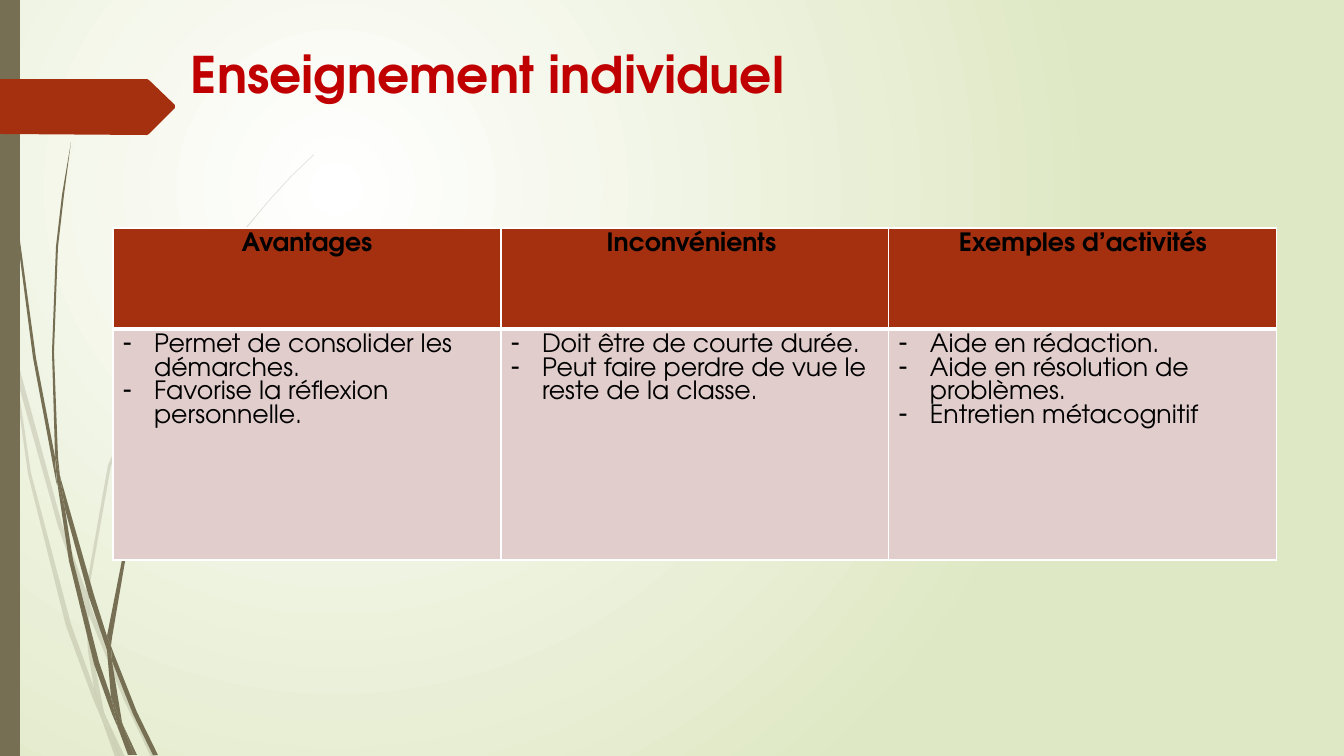
from lxml import etree
from pptx import Presentation
from pptx.dml.color import RGBColor
from pptx.enum.shapes import MSO_SHAPE
from pptx.enum.text import MSO_ANCHOR, PP_ALIGN
from pptx.oxml.ns import qn
from pptx.util import Pt

RECT = MSO_SHAPE.RECTANGLE
TOP = MSO_ANCHOR.TOP
LEFT, CENTER = PP_ALIGN.LEFT, PP_ALIGN.CENTER

FONT = "TeX Gyre Adventor"
WHITE = RGBColor(0xFF, 0xFF, 0xFF)
BLACK = RGBColor(0, 0, 0)
GREEN = RGBColor(0xDF, 0xE8, 0xC4)
OLIVE = RGBColor(0x76, 0x6F, 0x54)
RUST = RGBColor(0xA5, 0x30, 0x10)
RED = RGBColor(0xC0, 0, 0)
PINK = RGBColor(0xE1, 0xCD, 0xCC)

EMU = 914400 / 100.8

# Each blade of grass is the outline of one part, in px.
PALE = [
    [(11, 353), (9, 325), (0, 284), (0, 301), (10, 347)],
    [(58, 526), (85, 604), (86, 591), (62, 524), (14, 348), (17, 379)],
    [(93, 612), (89, 601), (89, 615), (124, 700), (151, 757), (156, 757),
     (128, 698)],
    [(120, 757), (125, 757), (106, 717)],
    [(94, 688), (71, 624), (31, 473), (17, 379), (11, 353), (28, 474),
     (66, 626), (93, 699), (102, 720), (100, 713)],
    [(85, 604), (88, 651), (94, 688), (97, 698), (106, 717), (104, 712),
     (92, 651), (89, 615), (89, 613)],
    [(89, 589), (111, 466), (161, 352), (231, 247), (270, 200), (292, 176),
     (314, 155), (314, 154), (291, 176), (270, 199), (230, 246), (159, 351),
     (108, 465), (86, 589), (86, 591), (89, 601)],
    [(102, 720), (115, 757), (120, 757)],
    [(89, 613), (89, 615), (89, 601), (86, 591), (85, 604)],
    [(97, 698), (94, 688), (100, 713), (102, 720), (120, 757), (106, 717)],
]
DARK = [
    [(7, 111), (17, 235), (33, 358), (56, 481), (57, 485), (55, 461),
     (55, 457), (36, 358), (19, 234), (8, 110), (5, 48), (4, 0), (3, 0),
     (4, 48)],
    [(89, 597), (107, 650), (107, 638), (107, 636), (94, 595), (60, 476),
     (65, 509)],
    [(114, 654), (111, 646), (112, 661), (133, 714), (153, 755), (158, 755),
     (137, 712)],
    [(111, 697), (99, 662), (73, 560), (65, 509), (57, 481), (69, 561),
     (94, 664), (112, 714), (118, 728), (117, 723)],
    [(60, 476), (58, 457), (54, 352), (58, 247), (64, 195), (71, 142),
     (62, 195), (56, 247), (52, 352), (55, 453)],
    [(134, 755), (137, 755), (123, 725)],
    [(57, 481), (65, 509), (60, 476), (55, 453), (55, 457)],
    [(112, 638), (126, 556), (159, 480), (207, 409), (233, 377), (247, 362),
     (263, 347), (262, 347), (247, 361), (233, 376), (206, 408), (157, 478),
     (123, 555), (107, 636), (111, 646)],
    [(118, 728), (128, 755), (132, 755)],
    [(107, 650), (111, 697), (117, 712), (123, 725), (122, 722), (112, 661),
     (110, 656)],
    [(107, 650), (110, 656), (112, 661), (111, 646), (107, 636), (107, 638)],
    [(117, 712), (111, 697), (117, 723), (118, 728), (131, 755), (134, 755),
     (123, 725)],
]
ARROW = [(0, 79), (147, 79), (149, 80), (175, 105), (175, 108), (149, 134),
         (147, 135), (0, 134)]

HEADS = ["Avantages", "Inconvénients ", "Exemples d’activités"]
ITEMS = [
    ["Permet de consolider les démarches.",
     "Favorise la réflexion personnelle."],
    ["Doit être de courte durée.",
     "Peut faire perdre de vue le reste de la classe."],
    ["Aide en rédaction.", "Aide en résolution de problèmes.",
     "Entretien métacognitif"],
]


def px(n):
    return round(n * EMU)


def paint(shape, color, alpha=100):
    shape.shadow.inherit = False
    shape.line.fill.background()
    shape.fill.solid()
    shape.fill.fore_color.rgb = color
    if alpha < 100:
        tint = next(shape.fill._xPr.iter(qn("a:srgbClr")))
        etree.SubElement(tint, qn("a:alpha"), val=str(alpha * 1000))


def outline(slide, points, color, alpha=100):
    spots = [(px(x), px(y)) for x, y in points]
    form = slide.shapes.build_freeform(*spots[0], scale=1.0)
    form.add_line_segments(spots[1:], close=True)
    paint(form.convert_to_shape(), color, alpha)


def backdrop(slide):
    fill = slide.background.fill
    fill.gradient()
    for stop, color, place in zip(fill.gradient_stops, (WHITE, GREEN), (0, 1)):
        stop.color.rgb = color
        stop.position = place
    line = next(slide.background._cSld.iter(qn("a:lin")))
    ring = etree.Element(qn("a:path"), {"path": "circle"})
    etree.SubElement(ring, qn("a:fillToRect"),
                     l="50000", t="50000", r="100000", b="100000")
    line.getparent().replace(line, ring)


def write(para, text, size, color, bold):
    run = para.add_run()
    run.text = text
    font = run.font
    font.name, font.size, font.bold = FONT, Pt(size), bold
    font.color.rgb = color


def title(slide, text):
    box = slide.shapes.add_textbox(px(181), px(38), px(983), px(89))
    frame = box.text_frame
    frame.word_wrap = True
    frame.vertical_anchor = TOP
    write(frame.paragraphs[0], text, 36, RED, True)


def dash(para):
    props = para._p.get_or_add_pPr()
    props.set("marL", str(px(31)))
    props.set("indent", str(px(-31)))
    etree.SubElement(props, qn("a:buFontTx"))
    etree.SubElement(props, qn("a:buChar"), char="-")


def border(cell, side, width):
    props = cell._tc.get_or_add_tcPr()
    line = etree.SubElement(props, qn("a:ln" + side), w=str(Pt(width)))
    fill = etree.SubElement(line, qn("a:solidFill"))
    etree.SubElement(fill, qn("a:srgbClr"), val=str(WHITE))


def fill_cell(cell, lines, color, edges, head):
    for side, width in edges:
        border(cell, side, width)
    cell.fill.solid()
    cell.fill.fore_color.rgb = color
    cell.vertical_anchor = TOP
    frame = cell.text_frame
    for n, text in enumerate(lines):
        para = frame.add_paragraph() if n else frame.paragraphs[0]
        para.alignment = CENTER if head else LEFT
        para.line_spacing = Pt(16.85)
        if not head:
            dash(para)
        write(para, text, 18, BLACK, head)


def grid(slide):
    table = slide.shapes.add_table(
        2, 3, px(113), px(228), px(1164), px(332)).table
    for row, high in zip(table.rows, (101, 231)):
        row.height = px(high)
    for n, (head, items) in enumerate(zip(HEADS, ITEMS)):
        table.columns[n].width = px(388)
        fill_cell(table.cell(0, n), [head], RUST,
                  [("L", 1), ("R", 1), ("T", 1), ("B", 3)], True)
        fill_cell(table.cell(1, n), items, PINK,
                  [("L", 1), ("R", 1), ("T", 3), ("B", 1)], False)


def main():
    deck = Presentation()
    deck.slide_width, deck.slide_height = px(1344), px(756)
    slide = deck.slides.add_slide(deck.slide_layouts[6])
    backdrop(slide)
    for group, alpha in ((PALE, 20), (DARK, 100)):
        for blade in group:
            outline(slide, blade, OLIVE, alpha)
    bar = slide.shapes.add_shape(RECT, 0, 0, px(20), px(756))
    paint(bar, OLIVE)
    outline(slide, ARROW, RUST)
    title(slide, "Enseignement individuel")
    grid(slide)
    deck.save("out.pptx")


if __name__ == "__main__":
    main()
